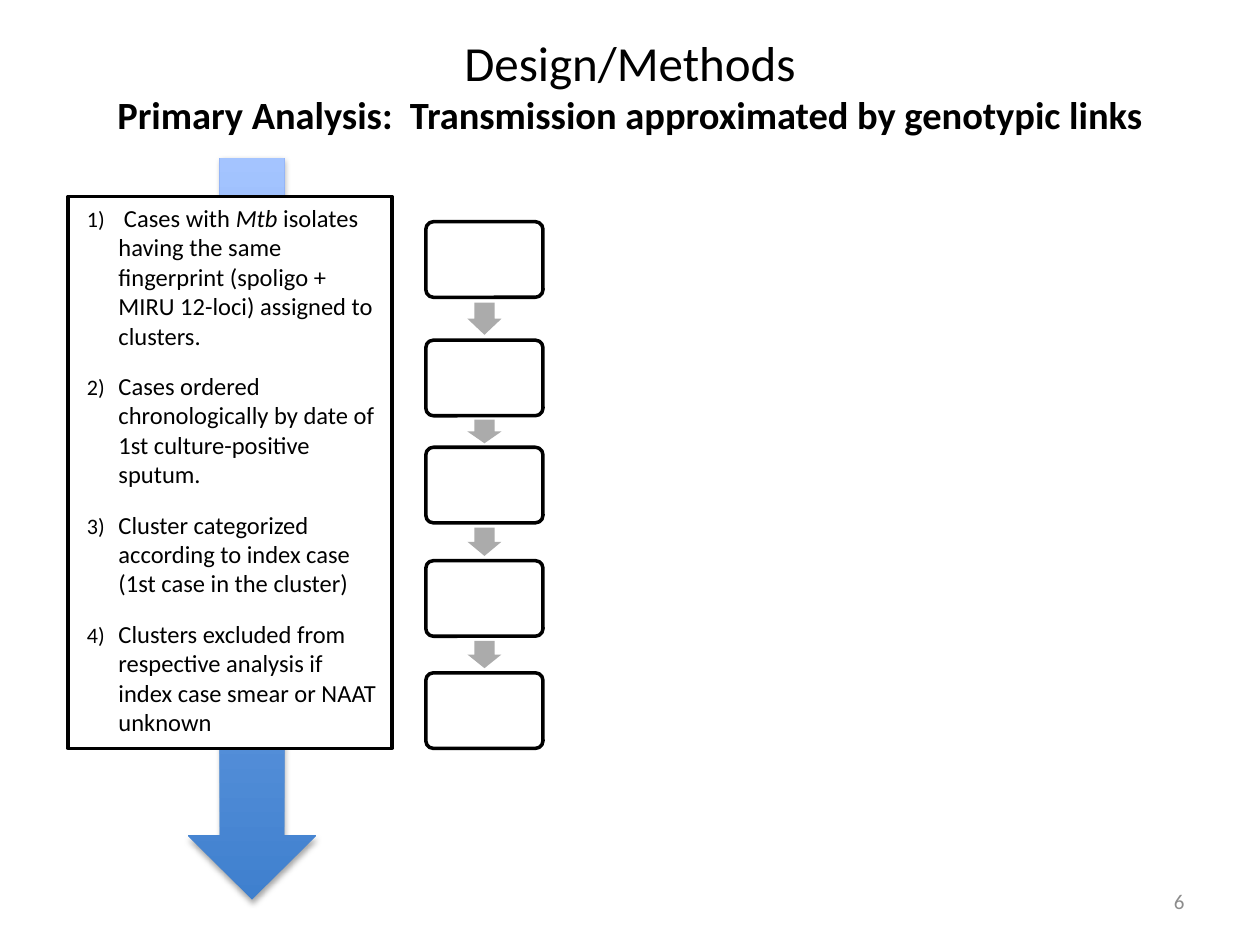
from dataclasses import dataclass
from itertools import pairwise

from lxml.etree import SubElement
from pptx import Presentation
from pptx.dml.color import RGBColor
from pptx.enum.shapes import MSO_SHAPE as Preset
from pptx.enum.text import MSO_ANCHOR as Anchor, MSO_AUTO_SIZE as AutoSize, PP_ALIGN as Align
from pptx.oxml import parse_xml
from pptx.oxml.ns import nsdecls, qn
from pptx.util import Inches, Pt

BLACK = RGBColor(0x00, 0x00, 0x00)
WHITE = RGBColor(0xFF, 0xFF, 0xFF)
GRAY = RGBColor(0xAB, 0xAB, 0xAB)
NUMBER_GRAY = RGBColor(0x8C, 0x8C, 0x8C)
DEEP_BLUE = RGBColor(0x3F, 0x80, 0xCE)
PALE_BLUE = RGBColor(0xA4, 0xC4, 0xFF)
FONT = "Calibri"

STEP_LEFT, STEP_WIDTH, STEP_HEIGHT = 3.38, 0.93, 0.6
STEP_TOPS = (1.76, 2.7, 3.55, 4.45, 5.34)
ARROW_BREADTH = 0.27


@dataclass(frozen=True)
class Area:
    left: float
    top: float
    width: float
    height: float

    def lengths(self) -> tuple:
        return tuple(Inches(n) for n in (self.left, self.top, self.width, self.height))


@dataclass(frozen=True)
class Span:
    text: str
    size: float = 14
    bold: bool = False
    italic: bool = False
    color: RGBColor = BLACK


METHODS = (
    (
        Span(" Cases with "),
        Span("Mtb ", italic=True),
        Span("isolates having the same fingerprint (spoligo + MIRU 12-loci) assigned to clusters."),
    ),
    (Span("Cases ordered chronologically by date of 1st culture-positive sputum."),),
    (Span("Cluster categorized according to index case (1st case in the cluster)"),),
    (Span("Clusters excluded from respective analysis if index case smear or NAAT unknown"),),
)
HEADING = (
    (Span("Design/Methods", 28),),
    (Span("Primary Analysis:  Transmission approximated by genotypic links", 22, bold=True),),
)
PAGE_NUMBER = ((Span("6", 12, color=NUMBER_GRAY),),)


def place(shape, area: Area) -> None:
    shape.left, shape.top, shape.width, shape.height = area.lengths()


def write(shape, rows: tuple, align: Align, anchor: Anchor) -> None:
    frame = shape.text_frame
    frame.word_wrap = True
    frame.auto_size = AutoSize.NONE
    frame.vertical_anchor = anchor
    frame.text = "\n".join("" for _ in rows)
    for para, spans in zip(frame.paragraphs, rows):
        para.alignment = align
        for span in spans:
            run = para.add_run()
            run.text = span.text
            font = run.font
            font.name, font.size = FONT, Pt(span.size)
            font.bold, font.italic = span.bold, span.italic
            font.color.rgb = span.color


def outline(shape) -> None:
    shape.fill.solid()
    shape.fill.fore_color.rgb = WHITE
    shape.line.color.rgb = BLACK
    shape.line.width = Pt(2)


def number(para) -> None:
    para.space_before = Pt(0)
    para.space_after = Pt(12)
    properties = para._p.get_or_add_pPr()
    properties.set("marL", str(Inches(0.3)))
    properties.set("indent", str(Inches(-0.25)))
    SubElement(properties, qn("a:buSzPct"), val="90000")
    SubElement(properties, qn("a:buFont"), typeface="+mj-lt")
    SubElement(properties, qn("a:buAutoNum"), type="arabicParenR")


def add_timeline(page) -> None:
    arrow = page.shapes.add_shape(Preset.DOWN_ARROW, *Area(1.49, 1.25, 1.02, 5.89).lengths())
    arrow.fill.gradient()
    arrow.fill.gradient_angle = 90
    for stop, color in zip(arrow.fill.gradient_stops, (DEEP_BLUE, PALE_BLUE)):
        stop.color.rgb = color
    arrow.line.fill.background()
    arrow.element.spPr.append(parse_xml(
        f'<a:effectLst {nsdecls("a")}>'
        f'<a:outerShdw blurRad="{Pt(3.1)}" dist="{Pt(1.8)}" dir="5400000" rotWithShape="0">'
        '<a:srgbClr val="000000"><a:alpha val="35000"/></a:srgbClr>'
        '</a:outerShdw></a:effectLst>'
    ))


def add_step(group, top: float) -> None:
    area = Area(STEP_LEFT, top, STEP_WIDTH, STEP_HEIGHT)
    box = group.shapes.add_shape(Preset.ROUNDED_RECTANGLE, *area.lengths())
    box.adjustments[0] = 0.1
    box.shadow.inherit = False
    outline(box)


def add_step_arrow(group, upper: float, lower: float) -> None:
    gap_top = upper + STEP_HEIGHT
    length = 0.75 * (lower - gap_top)
    center_x = STEP_LEFT + STEP_WIDTH / 2
    center_y = (gap_top + lower) / 2
    area = Area(center_x - length / 2, center_y - ARROW_BREADTH / 2, length, ARROW_BREADTH)
    arrow = group.shapes.add_shape(Preset.RIGHT_ARROW, *area.lengths())
    arrow.rotation = 90
    arrow.adjustments[0] = 0.6
    arrow.adjustments[1] = 0.5
    arrow.shadow.inherit = False
    arrow.fill.solid()
    arrow.fill.fore_color.rgb = GRAY
    arrow.line.fill.background()


def add_flow(page) -> None:
    group = page.shapes.add_group_shape()
    for top in STEP_TOPS:
        add_step(group, top)
    for upper, lower in pairwise(STEP_TOPS):
        add_step_arrow(group, upper, lower)


def main() -> None:
    deck = Presentation()
    deck.slide_width, deck.slide_height = Inches(10), Inches(7.5)
    page = deck.slides.add_slide(deck.slide_layouts[1])
    title, methods = page.shapes.title, page.placeholders[1]

    add_timeline(page)
    add_flow(page)

    place(methods, Area(0.54, 1.56, 2.57, 4.38))
    outline(methods)
    write(methods, METHODS, Align.LEFT, Anchor.TOP)
    for para in methods.text_frame.paragraphs:
        number(para)
    page.shapes.element.append(methods.element)

    place(title, Area(0.5, 0.05, 9, 1.25))
    write(title, HEADING, Align.CENTER, Anchor.MIDDLE)
    page.shapes.element.append(title.element)

    page_number = page.shapes.add_textbox(*Area(7.17, 6.95, 2.33, 0.4).lengths())
    write(page_number, PAGE_NUMBER, Align.RIGHT, Anchor.MIDDLE)

    deck.save("out.pptx")


if __name__ == "__main__":
    main()
